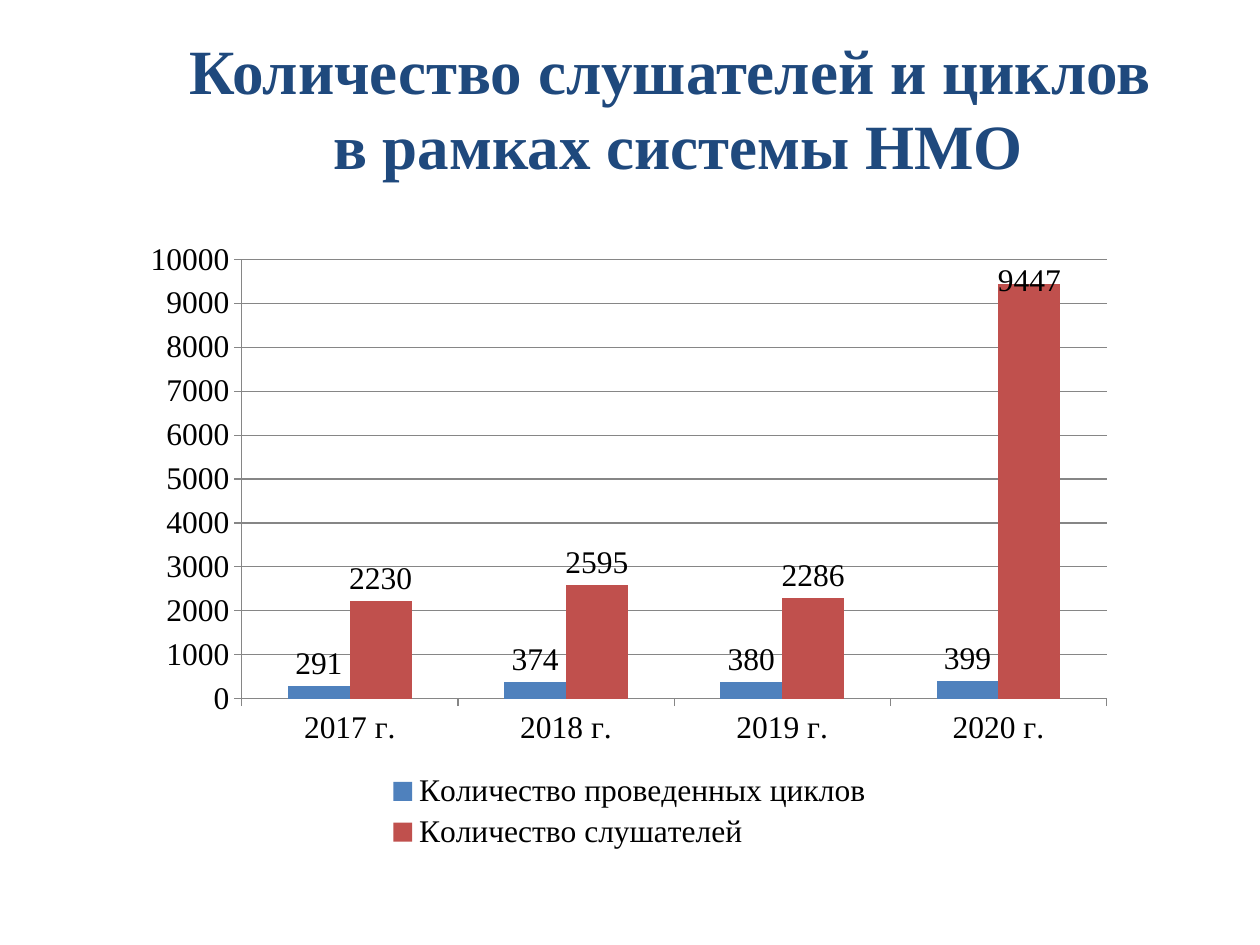
from dataclasses import dataclass

from lxml import etree
from pptx import Presentation
from pptx.chart.data import CategoryChartData
from pptx.dml.color import RGBColor
from pptx.enum.chart import XL_CHART_TYPE, XL_LABEL_POSITION, XL_LEGEND_POSITION, XL_TICK_MARK
from pptx.enum.text import MSO_ANCHOR, PP_ALIGN
from pptx.oxml.ns import qn
from pptx.util import Cm, Pt

COLUMNS = XL_CHART_TYPE.COLUMN_CLUSTERED
ABOVE_BAR = XL_LABEL_POSITION.OUTSIDE_END
BOTTOM = XL_LEGEND_POSITION.BOTTOM
OUTSIDE = XL_TICK_MARK.OUTSIDE
MIDDLE = MSO_ANCHOR.MIDDLE
CENTER = PP_ALIGN.CENTER


@dataclass(frozen=True)
class Theme:
    font: str = "Times New Roman"
    title_size: Pt = Pt(36)
    chart_size: Pt = Pt(18)
    line_width: Pt = Pt(0.75)
    title: RGBColor = RGBColor(0x1F, 0x49, 0x7D)
    text: RGBColor = RGBColor(0, 0, 0)
    grid: RGBColor = RGBColor(0x86, 0x86, 0x86)
    series: tuple = (RGBColor(0x4F, 0x81, 0xBD), RGBColor(0xC0, 0x50, 0x4D))


@dataclass(frozen=True)
class Box:
    left: float
    top: float
    width: float
    height: float

    def lengths(self):
        return Cm(self.left), Cm(self.top), Cm(self.width), Cm(self.height)


THEME = Theme()
TITLE_LINES = ("Количество слушателей и циклов ", "в рамках системы НМО")
YEARS = ("2017 г.", "2018 г.", "2019 г.", "2020 г.")
SERIES = {
    "Количество проведенных циклов": (291, 374, 380, 399),
    "Количество слушателей": (2230, 2595, 2286, 9447),
}


def style_font(font, size, color, bold=False):
    font.name = THEME.font
    font.size = size
    font.bold = bold
    font.color.rgb = color


def set_layout(element, after, **settings):
    for old in element.findall(qn("c:layout")):
        element.remove(old)
    layout = etree.Element(qn("c:layout"))
    manual = etree.SubElement(layout, qn("c:manualLayout"))
    for tag, value in settings.items():
        etree.SubElement(manual, qn(f"c:{tag}")).set("val", str(value))
    if after is None:
        element.insert(0, layout)
    else:
        element.find(qn(after)).addnext(layout)


def add_title(page, box):
    shape = page.shapes.add_textbox(*box.lengths())
    frame = shape.text_frame
    frame.word_wrap = True
    frame.vertical_anchor = MIDDLE
    frame.margin_left = frame.margin_right = Cm(0.33)
    frame.margin_top = frame.margin_bottom = Cm(0.18)
    para = frame.paragraphs[0]
    para.alignment = CENTER
    for index, line in enumerate(TITLE_LINES):
        if index:
            para.add_line_break()
        span = para.add_run()
        span.text = line
        style_font(span.font, THEME.title_size, THEME.title, bold=True)


def style_axis(axis):
    axis.major_tick_mark = OUTSIDE
    style_font(axis.tick_labels.font, THEME.chart_size, THEME.text)
    axis.format.line.color.rgb = THEME.grid
    axis.format.line.width = THEME.line_width


def style_series(series, color):
    series.format.fill.solid()
    series.format.fill.fore_color.rgb = color
    series.invert_if_negative = False
    labels = series.data_labels
    labels.show_value = True
    labels.position = ABOVE_BAR
    style_font(labels.font, THEME.chart_size, THEME.text)


def lower_last_label(series):
    label = series.points[len(YEARS) - 1].data_label
    style_font(label.font, THEME.chart_size, THEME.text)
    label.position = ABOVE_BAR
    element = series.data_labels._element.find(qn("c:dLbl"))
    set_layout(element, "c:idx", x=0, y=0.03)


def add_column_chart(page, box):
    data = CategoryChartData()
    data.categories = YEARS
    for name, values in SERIES.items():
        data.add_series(name, values)
    chart = page.shapes.add_chart(COLUMNS, *box.lengths(), data).chart
    style_font(chart.font, THEME.chart_size, THEME.text)
    chart.has_title = False

    plot = chart.plots[0]
    plot.gap_width = 150
    plot.overlap = 0
    plot.vary_by_categories = False
    for series, color in zip(plot.series, THEME.series):
        style_series(series, color)
    lower_last_label(plot.series[-1])

    style_axis(chart.category_axis)
    scale = chart.value_axis
    style_axis(scale)
    scale.minimum_scale = 0
    scale.maximum_scale = 10000
    scale.major_unit = 1000
    grid_line = scale.major_gridlines.format.line
    grid_line.color.rgb = THEME.grid
    grid_line.width = THEME.line_width

    chart.has_legend = True
    legend = chart.legend
    legend.position = BOTTOM
    legend.include_in_layout = False
    style_font(legend.font, THEME.chart_size, THEME.text)
    set_layout(legend._element, "c:legendPos", xMode="edge", yMode="edge",
               x=0.25, y=0.86, w=0.5, h=0.14)
    plot_area = chart._chartSpace.find(f".//{qn('c:plotArea')}")
    set_layout(plot_area, None, layoutTarget="inner", xMode="edge", yMode="edge",
               x=0.11, y=0.05, w=0.87, h=0.7)


def main():
    deck = Presentation()
    deck.slide_width = Cm(25.4)
    deck.slide_height = Cm(19.05)
    page = deck.slides.add_slide(deck.slide_layouts[6])
    add_title(page, Box(2.24, 0.56, 22.86, 3.18))
    add_column_chart(page, Box(2.67, 4.6, 20.04, 12.65))
    deck.save("out.pptx")


if __name__ == "__main__":
    main()
